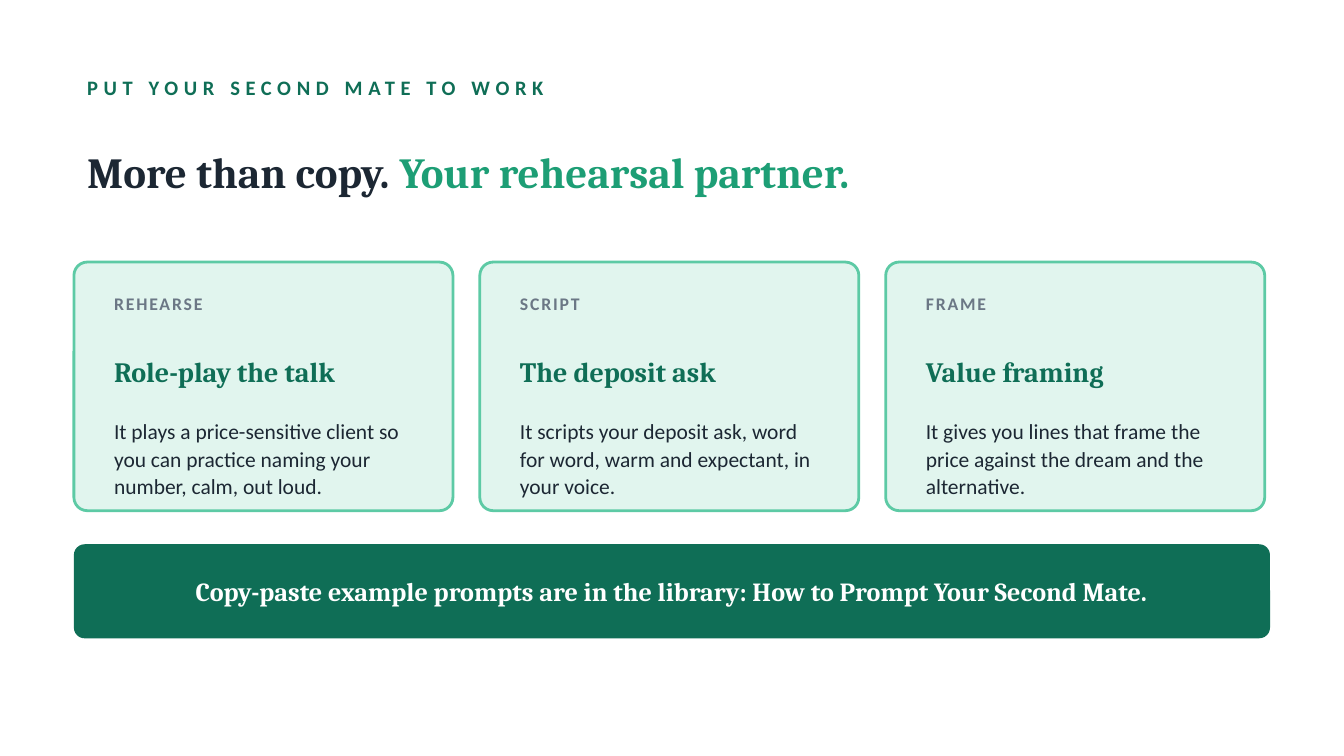
from pptx import Presentation
from pptx import util as u
from pptx.dml.color import RGBColor
from pptx.enum import shapes, text

# Content
EYEBROW = "PUT YOUR SECOND MATE TO WORK"
TITLE_START = "More than copy. "
TITLE_END = "Your rehearsal partner."
CARDS = [
    ("REHEARSE", "Role-play the talk",
     "It plays a price-sensitive client so you can practice naming your number, calm, out loud."),
    ("SCRIPT", "The deposit ask",
     "It scripts your deposit ask, word for word, warm and expectant, in your voice."),
    ("FRAME", "Value framing",
     "It gives you lines that frame the price against the dream and the alternative."),
]
BANNER = "Copy-paste example prompts are in the library: How to Prompt Your Second Mate."

# Style
WHITE = RGBColor(0xFF, 0xFF, 0xFF)
INK = RGBColor(0x1C, 0x27, 0x33)
GRAY = RGBColor(0x6B, 0x77, 0x85)
DARK_GREEN = RGBColor(0x0F, 0x6E, 0x56)
GREEN = RGBColor(0x1D, 0x9E, 0x75)
MINT = RGBColor(0x5D, 0xCA, 0xA5)
PALE_MINT = RGBColor(0xE1, 0xF5, 0xEE)
SANS, SERIF = "Calibri", "Cambria"

# Layout, in inches
SLIDE_WIDTH = 10
LEFT, CONTENT_WIDTH = 0.55, 8.9
CARD_TOP, CARD_WIDTH, CARD_HEIGHT, CARD_GAP = 1.95, 2.82, 1.85, 0.2
CARD_PADDING, CARD_TEXT_WIDTH = 0.2, 2.45
BANNER_TOP, BANNER_HEIGHT, BANNER_PADDING = 4.05, 0.7, 0.25
CARD_RADIUS, BANNER_RADIUS = 0.1, 0.08

presentation = Presentation()
presentation.slide_width = u.Inches(SLIDE_WIDTH)
presentation.slide_height = u.Inches(SLIDE_WIDTH * 9 / 16)
slide = presentation.slides.add_slide(presentation.slide_layouts[6])
slide.background.fill.solid()
slide.background.fill.fore_color.rgb = WHITE


def add_run(paragraph, content, *, size, font, color, bold=True, spacing=0):
    run = paragraph.add_run()
    run.text = content
    run.font.size = u.Pt(size)
    run.font.name = font
    run.font.bold = bold
    run.font.color.rgb = color
    if spacing:
        run.font._element.set("spc", str(spacing * 100))


def add_text(content, box, *, align=text.PP_ALIGN.LEFT, line_spacing=None, **style):
    frame = slide.shapes.add_textbox(*map(u.Inches, box)).text_frame
    frame.word_wrap = True
    frame.vertical_anchor = text.MSO_ANCHOR.MIDDLE
    paragraph = frame.paragraphs[0]
    paragraph.alignment = align
    if line_spacing:
        paragraph.line_spacing = line_spacing
    add_run(paragraph, content, **style)
    return paragraph


def add_panel(box, radius, fill, line=None):
    shape = slide.shapes.add_shape(
        shapes.MSO_SHAPE.ROUNDED_RECTANGLE, *map(u.Inches, box))
    shape.adjustments[0] = radius / min(box[2:])
    shape.shadow.inherit = False
    shape.fill.solid()
    shape.fill.fore_color.rgb = fill
    if line is None:
        shape.line.fill.background()
    else:
        shape.line.color.rgb = line
        shape.line.width = u.Pt(1.5)


# Heading
add_text(EYEBROW, (LEFT, 0.5, CONTENT_WIDTH, 0.3),
         size=11, font=SANS, color=DARK_GREEN, spacing=3)
title = add_text(TITLE_START, (LEFT, 0.85, CONTENT_WIDTH, 0.85),
                 size=23, font=SERIF, color=INK)
add_run(title, TITLE_END, size=23, font=SERIF, color=GREEN)

# Cards
for index, (label, heading, body) in enumerate(CARDS):
    left = LEFT + index * (CARD_WIDTH + CARD_GAP)
    text_left = left + CARD_PADDING
    add_panel((left, CARD_TOP, CARD_WIDTH, CARD_HEIGHT), CARD_RADIUS, PALE_MINT, MINT)
    add_text(label, (text_left, CARD_TOP + 0.16, CARD_TEXT_WIDTH, 0.3),
             size=9.5, font=SANS, color=GRAY, spacing=1)
    add_text(heading, (text_left, CARD_TOP + 0.46, CARD_TEXT_WIDTH, 0.7),
             size=15, font=SERIF, color=DARK_GREEN)
    add_text(body, (text_left, CARD_TOP + 1.18, CARD_TEXT_WIDTH, 0.55),
             size=11.5, font=SANS, color=INK, bold=False, line_spacing=1.08)

# Banner
add_panel((LEFT, BANNER_TOP, CONTENT_WIDTH, BANNER_HEIGHT), BANNER_RADIUS, DARK_GREEN)
add_text(BANNER, (LEFT + BANNER_PADDING, BANNER_TOP,
                  CONTENT_WIDTH - 2 * BANNER_PADDING, BANNER_HEIGHT),
         align=text.PP_ALIGN.CENTER, size=14, font=SERIF, color=WHITE)

presentation.save("out.pptx")
